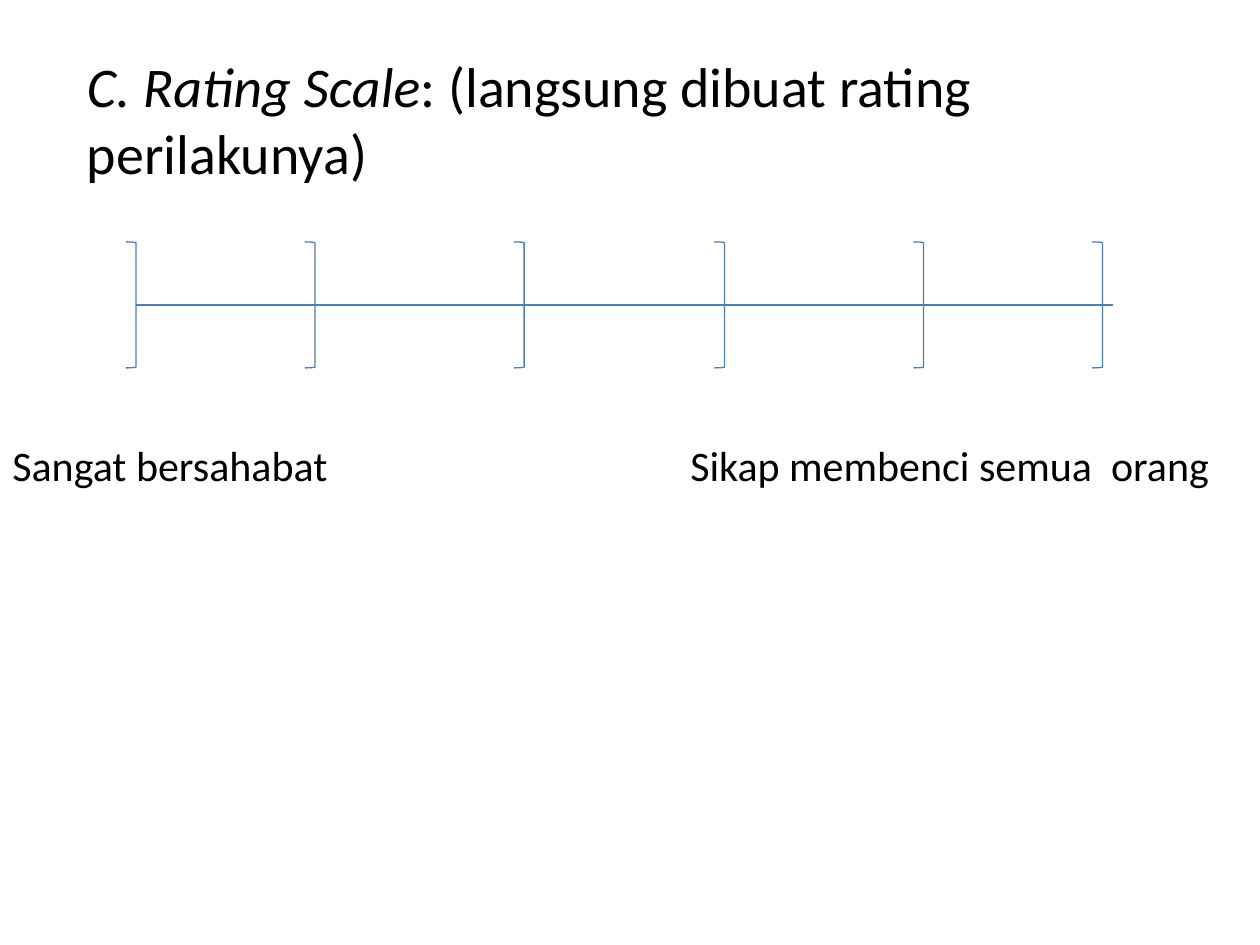
from pptx import Presentation
from pptx.dml.color import RGBColor
from pptx.enum.shapes import MSO_CONNECTOR, MSO_SHAPE
from pptx.enum.text import MSO_ANCHOR, PP_ALIGN
from pptx.oxml.ns import qn
from pptx.util import Inches, Pt
from lxml import etree

BLUE, BLACK = "4B7EBC", "000000"
TICK_W, TICK_H = 0.08, 1
TICK_TOP = 1.92
TICK_LEFTS = [1, 2.42, 4.08, 5.67, 7.25, 8.67]


def rgb(color):
    return RGBColor.from_string(color)


def write(tf, runs, size):
    """Fill a frame with one left-aligned paragraph of (text, italic) runs."""
    tf.word_wrap = True
    tf.vertical_anchor = MSO_ANCHOR.TOP
    p = tf.paragraphs[0]
    p.alignment = PP_ALIGN.LEFT
    for text, italic in runs:
        r = p.add_run()
        r.text = text
        r.font.name = "Calibri"
        r.font.size = Pt(size)
        r.font.italic = italic
        r.font.color.rgb = rgb(BLACK)


def set_title(s, runs):
    sp = s.shapes.title
    sp.left, sp.top = Inches(0.59), Inches(0.36)
    sp.width, sp.height = Inches(8.43), Inches(1.18)
    write(sp.text_frame, runs, 32)


def add_label(s, text, left, width):
    sp = s.shapes.add_textbox(Inches(left), Inches(3.44), Inches(width), Inches(0.5))
    write(sp.text_frame, [(text, False)], 24)


def style_line(line):
    line.color.rgb = rgb(BLUE)
    line.width = Pt(0.75)


def add_axis(s, x1, x2, y):
    axis = s.shapes.add_connector(
        MSO_CONNECTOR.STRAIGHT, Inches(x1), Inches(y), Inches(x2), Inches(y))
    style_line(axis.line)
    etree.SubElement(axis._element.spPr, qn("a:effectLst"))


def add_tick(s, left):
    sp = s.shapes.add_shape(
        MSO_SHAPE.RIGHT_BRACKET,
        Inches(left), Inches(TICK_TOP), Inches(TICK_W), Inches(TICK_H))
    sp.shadow.inherit = False
    sp.fill.background()
    style_line(sp.line)


def main():
    prs = Presentation()
    prs.slide_width, prs.slide_height = Inches(10), Inches(7.5)
    s = prs.slides.add_slide(prs.slide_layouts[5])

    set_title(s, [("C. Rating Scale", True),
                  (": (langsung dibuat rating perilakunya)", False)])

    # Rating scale: axis with bracket ticks
    add_axis(s, TICK_LEFTS[0] + TICK_W, 8.83, TICK_TOP + TICK_H / 2)
    for left in TICK_LEFTS:
        add_tick(s, left)

    # Labels for the two ends of the scale
    add_label(s, "Sangat bersahabat", 0, 3)
    add_label(s, "Sikap membenci semua  orang", 5.38, 4.45)

    prs.save("out.pptx")


if __name__ == "__main__":
    main()
